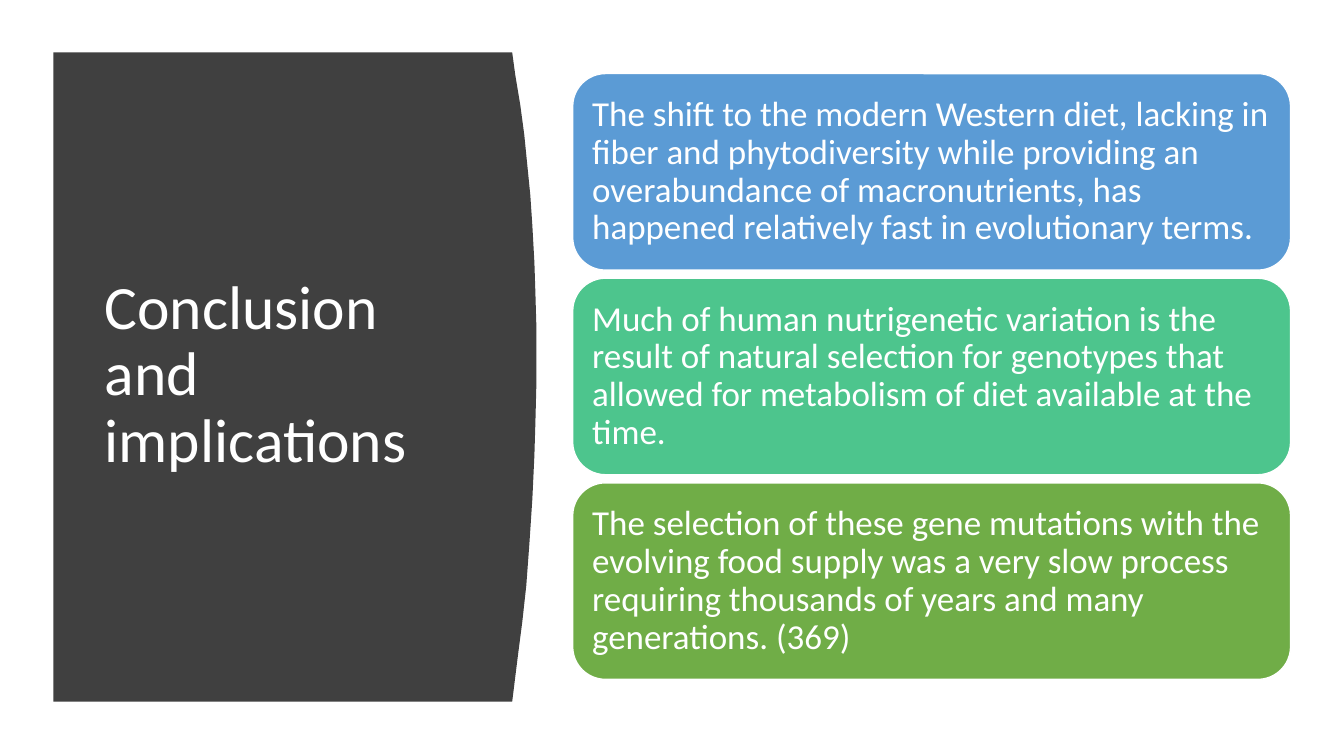
from dataclasses import dataclass

from pptx import Presentation
from pptx.dml.color import RGBColor
from pptx.enum.shapes import MSO_SHAPE as Shape
from pptx.enum.text import MSO_ANCHOR as Anchor, PP_ALIGN as Align
from pptx.slide import Slide
from pptx.text.text import TextFrame
from pptx.util import Inches, Pt

FONT = "Calibri"
WHITE = "FFFFFF"
DARK_GRAY = "404040"

CARD_LEFT, CARD_TOP = 5.68, 0.73
CARD_WIDTH, CARD_HEIGHT = 7.12, 1.95
CARD_STEP = 2.03

# Outline of the title panel: straight left side, bulging right side
PANEL_OUTLINE = [
    (0.53, 0.52), (5.08, 0.52), (5.11, 0.74), (5.16, 1.04), (5.2, 1.34),
    (5.23, 1.64), (5.26, 1.94), (5.28, 2.24), (5.3, 2.6), (5.31, 2.9),
    (5.32, 3.25), (5.32, 3.8), (5.31, 4.2), (5.3, 4.52), (5.28, 4.95),
    (5.25, 5.4), (5.22, 5.81), (5.18, 6.17), (5.14, 6.48), (5.11, 6.72),
    (5.08, 6.96), (0.53, 6.96),
]


@dataclass
class Card:
    text: str
    fill: str


CARDS = [
    Card("The shift to the modern Western diet, lacking in fiber and "
         "phytodiversity while providing an overabundance of macronutrients, "
         "has happened relatively fast in evolutionary terms.", "5B9BD5"),
    Card("Much of human nutrigenetic variation is the result of natural "
         "selection for genotypes that allowed for metabolism of diet "
         "available at the time.", "4DC58D"),
    Card("The selection of these gene mutations with the evolving food supply "
         "was a very slow process requiring thousands of years and many "
         "generations. (369)", "70AD47"),
]


def color(value: str) -> RGBColor:
    return RGBColor.from_string(value)


def write_text(frame: TextFrame, text: str, size: float) -> None:
    frame.word_wrap = True
    frame.vertical_anchor = Anchor.MIDDLE
    paragraph = frame.paragraphs[0]
    paragraph.text = text
    paragraph.alignment = Align.LEFT
    paragraph.line_spacing = 0.9
    paragraph.font.name = FONT
    paragraph.font.size = Pt(size)
    paragraph.font.color.rgb = color(WHITE)


def add_panel(slide: Slide) -> None:
    points = [(Inches(x), Inches(y)) for x, y in PANEL_OUTLINE]
    builder = slide.shapes.build_freeform(*points[0])
    builder.add_line_segments(points[1:], close=True)
    shape = builder.convert_to_shape()
    shape.shadow.inherit = False
    shape.fill.solid()
    shape.fill.fore_color.rgb = color(DARK_GRAY)
    shape.line.fill.background()


def add_title(slide: Slide, text: str) -> None:
    box = slide.shapes.add_textbox(
        Inches(0.94), Inches(1.11), Inches(3.74), Inches(5.24))
    write_text(box.text_frame, text, 44)


def add_card(slide: Slide, card: Card, top: float) -> None:
    shape = slide.shapes.add_shape(
        Shape.ROUNDED_RECTANGLE, Inches(CARD_LEFT), Inches(top),
        Inches(CARD_WIDTH), Inches(CARD_HEIGHT))
    shape.shadow.inherit = False
    shape.fill.solid()
    shape.fill.fore_color.rgb = color(card.fill)
    shape.line.color.rgb = color(WHITE)
    shape.line.width = Pt(1)
    frame = shape.text_frame
    frame.margin_left = frame.margin_right = Inches(0.1)
    frame.margin_top = frame.margin_bottom = Inches(0.1)
    write_text(frame, card.text, 25)


def main() -> None:
    presentation = Presentation()
    presentation.slide_width = Inches(13.33)
    presentation.slide_height = Inches(7.5)
    slide = presentation.slides.add_slide(presentation.slide_layouts[6])

    # Title panel on the left
    add_panel(slide)
    add_title(slide, "Conclusion and implications")

    # Stack of conclusions on the right
    for index, card in enumerate(CARDS):
        add_card(slide, card, CARD_TOP + index * CARD_STEP)

    presentation.save("out.pptx")


if __name__ == "__main__":
    main()
